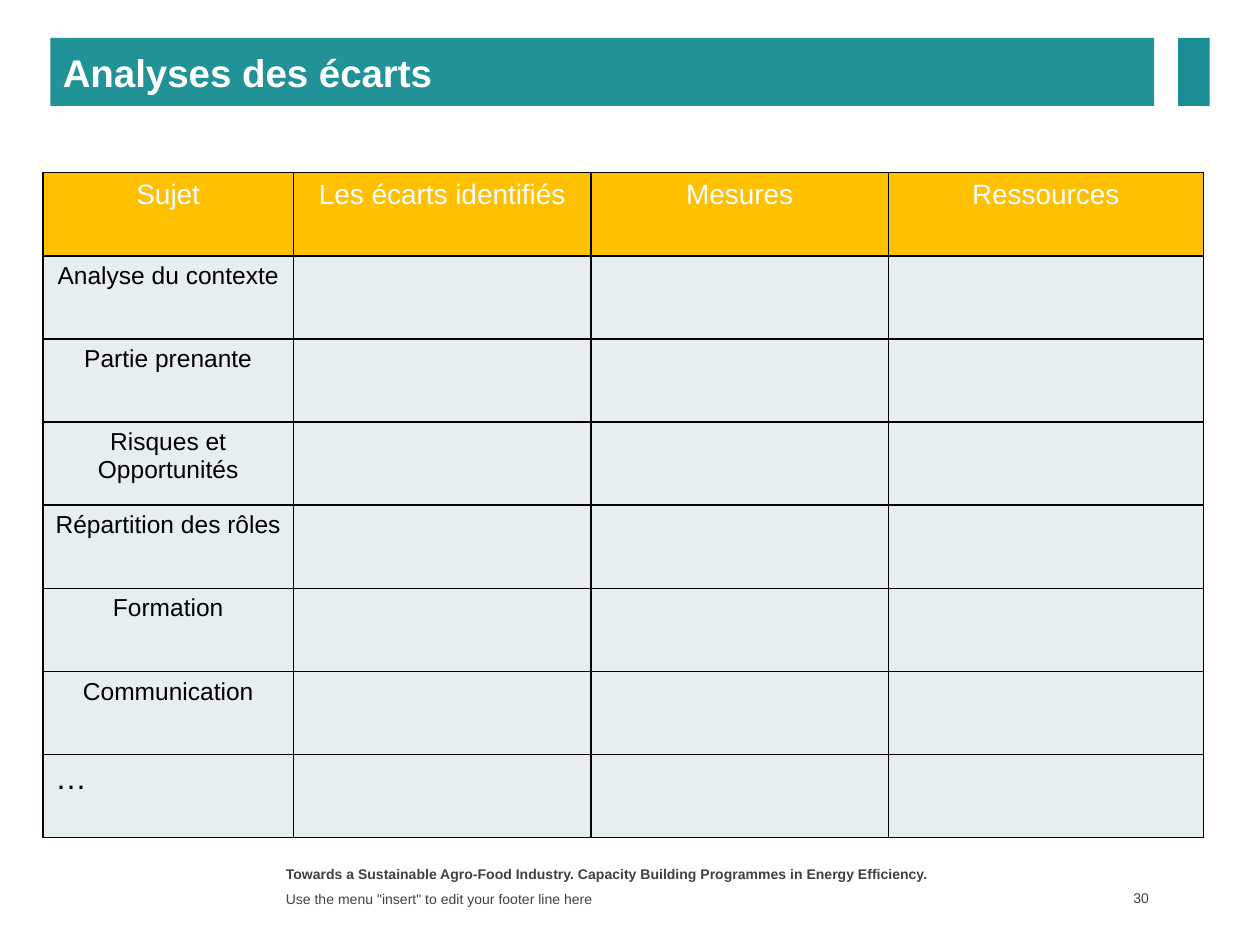
from lxml import etree
from pptx import Presentation
from pptx.dml.color import RGBColor
from pptx.enum import shapes, text
from pptx.oxml.ns import qn
from pptx.util import Inches, Pt

WHITE = RGBColor(0xFF, 0xFF, 0xFF)
BLACK = RGBColor(0, 0, 0)
GREY = RGBColor(0x40, 0x40, 0x40)
TEAL = RGBColor(0x20, 0x92, 0x98)
DARK_TEAL = RGBColor(0x1B, 0x8E, 0x95)
AMBER = RGBColor(0xFF, 0xC0, 0x00)
PALE = RGBColor(0xE7, 0xEE, 0xEF)

# Content
TITLE = "Analyses des écarts"
HEADERS = ["Sujet", "Les écarts identifiés", "Mesures", "Ressources"]
TOPICS = ["Analyse du contexte", "Partie prenante", "Risques et Opportunités",
          "Répartition des rôles", "Formation", "Communication", "…"]
COLUMN_WIDTHS = [1.99, 2.36, 2.36, 2.5]
ROW_HEIGHT = 0.66
LEFT, CENTER, RIGHT = text.PP_ALIGN.LEFT, text.PP_ALIGN.CENTER, text.PP_ALIGN.RIGHT
TOP, MIDDLE = text.MSO_ANCHOR.TOP, text.MSO_ANCHOR.MIDDLE
# text, (left, top, width, height), bold, alignment, anchor, right inset
FOOTERS = [
    ("Towards a Sustainable Agro-Food Industry. "
     "Capacity Building Programmes in Energy Efficiency.",
     (2.17, 6.82, 5.5, 0.21), True, LEFT, TOP, 0.1),
    ('Use the menu "insert" to edit your footer line here',
     (2.17, 7.04, 5.5, 0.19), False, LEFT, MIDDLE, 0.1),
    ("30", (8.6, 7.03, 0.56, 0.2), False, RIGHT, MIDDLE, 0.04),
]


def write(frame, words, size, color, bold=False, align=LEFT):
    para = frame.paragraphs[0]
    para.text = words
    para.alignment = align
    para.font.name = "Arial"
    para.font.size = Pt(size)
    para.font.bold = bold
    para.font.color.rgb = color


def add_bar(page, place, color):
    bar = page.shapes.add_shape(shapes.MSO_SHAPE.RECTANGLE, *map(Inches, place))
    bar.shadow.inherit = False
    bar.fill.solid()
    bar.fill.fore_color.rgb = color
    bar.line.fill.background()
    return bar


def style_cell(cell, color):
    properties = cell._tc.get_or_add_tcPr()
    for side in ("a:lnL", "a:lnR", "a:lnT", "a:lnB"):
        line = etree.SubElement(properties, qn(side), w=str(Pt(1)))
        fill = etree.SubElement(line, qn("a:solidFill"))
        etree.SubElement(fill, qn("a:srgbClr"), val=str(BLACK))
    cell.fill.solid()
    cell.fill.fore_color.rgb = color


def add_gap_table(page):
    row_count = len(TOPICS) + 1
    table = page.shapes.add_table(
        row_count, len(HEADERS), Inches(0.34), Inches(1.37),
        Inches(sum(COLUMN_WIDTHS)), Inches(ROW_HEIGHT * row_count)).table
    for column, width in zip(table.columns, COLUMN_WIDTHS):
        column.width = Inches(width)
    for index, row in enumerate(table.rows):
        row.height = Inches(ROW_HEIGHT)
        for cell in row.cells:
            style_cell(cell, PALE if index else AMBER)
    for index, header in enumerate(HEADERS):
        write(table.cell(0, index).text_frame, header, 16, WHITE, align=CENTER)
    for index, topic in enumerate(TOPICS, 1):
        size, align = (18, LEFT) if topic == "…" else (14, CENTER)
        write(table.cell(index, 0).text_frame, topic, size, BLACK, align=align)


def main():
    deck = Presentation()
    deck.slide_width, deck.slide_height = Inches(10), Inches(7.5)
    page = deck.slides.add_slide(deck.slide_layouts[6])

    # Footer
    for words, place, bold, align, anchor, inset in FOOTERS:
        frame = page.shapes.add_textbox(*map(Inches, place)).text_frame
        frame.word_wrap = True
        frame.vertical_anchor = anchor
        frame.margin_right = Inches(inset)
        write(frame, words, 8, GREY, bold, align)

    add_gap_table(page)

    # Title bar and accent
    title = add_bar(page, (0.4, 0.3, 8.76, 0.54), TEAL)
    title.text_frame.vertical_anchor = MIDDLE
    write(title.text_frame, TITLE, 22, WHITE, bold=True)
    add_bar(page, (9.35, 0.3, 0.25, 0.54), DARK_TEAL)

    deck.save("out.pptx")


if __name__ == "__main__":
    main()
